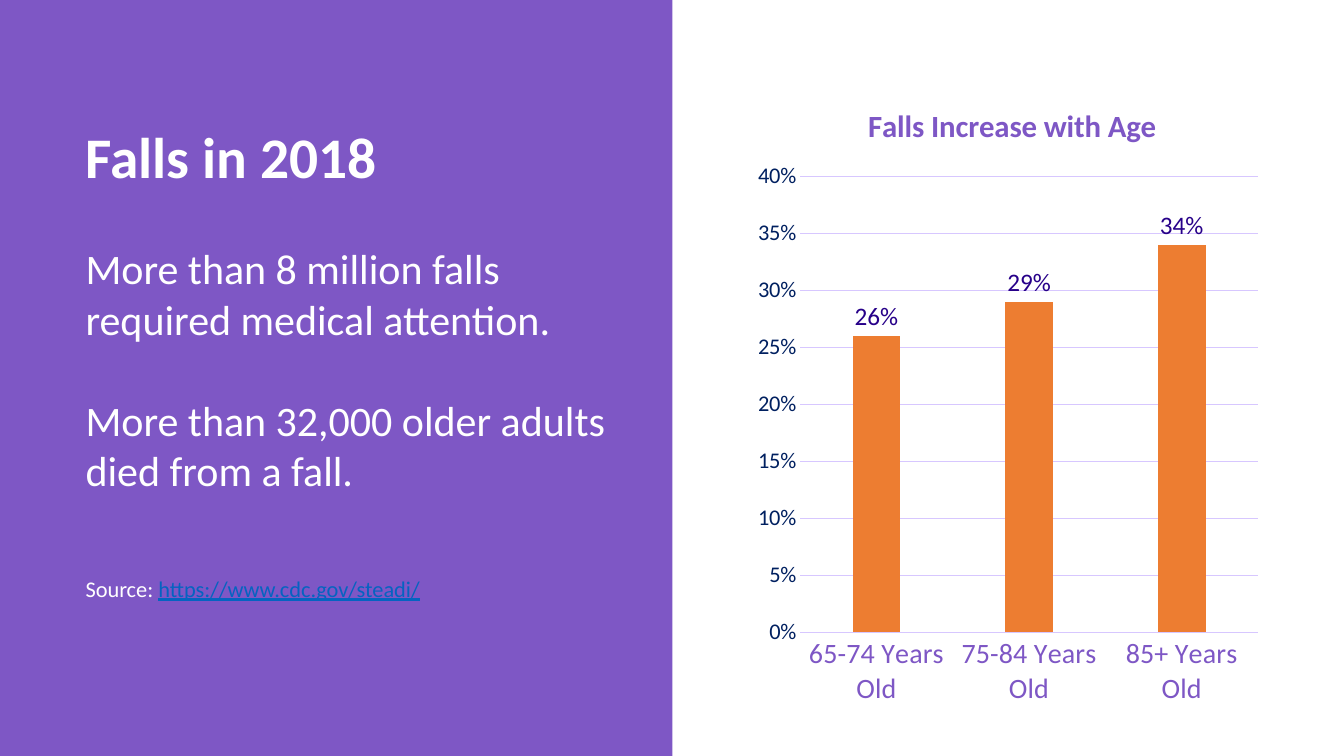
from lxml import etree
from pptx import Presentation
from pptx.chart.data import CategoryChartData
from pptx.dml.color import RGBColor
from pptx.enum.chart import XL_CHART_TYPE, XL_LABEL_POSITION as LabelPos, XL_TICK_MARK as Tick
from pptx.enum.shapes import MSO_SHAPE
from pptx.enum.text import MSO_ANCHOR
from pptx.oxml.ns import qn
from pptx.util import Inches, Pt

PURPLE = RGBColor(0x7E, 0x57, 0xC5)
WHITE = RGBColor(0xFF, 0xFF, 0xFF)
LINK = RGBColor(0x05, 0x63, 0xC1)
ORANGE = RGBColor(0xED, 0x7D, 0x31)
INDIGO = RGBColor(0x27, 0x00, 0x89)
NAVY = RGBColor(0x00, 0x20, 0x60)
LILAC = RGBColor(0xD7, 0xC7, 0xFF)

TITLE = "Falls in 2018"
# (space before in points, [(text, size, colour, underlined)])
FACTS = [
    (0, [("More than 8 million falls required medical attention.", 30, WHITE, False)]),
    (36, [("More than 32,000 older adults died from a fall.", 30, WHITE, False)]),
    (57, [("Source: ", 16, WHITE, False),
          ("https://www.cdc.gov/steadi/", 16, LINK, True)]),
]
CHART_TITLE = "Falls Increase with Age"
FALL_RATES = {"65-74 Years Old": 0.26, "75-84 Years Old": 0.29, "85+ Years Old": 0.34}
TITLE_PLACE = {"x": 0.22, "y": 0.04}
PLOT_PLACE = {"x": 0.1, "y": 0.16, "w": 0.88, "h": 0.71}


def set_font(font, size, color, **more):
    font.color.rgb = color
    for name, value in {"name": "Calibri", "size": Pt(size), **more}.items():
        setattr(font, name, value)


def add_text(s, box, paragraphs, **frame):
    tf = s.shapes.add_textbox(*map(Inches, box)).text_frame
    for name, value in {"word_wrap": True, **frame}.items():
        setattr(tf, name, value)
    for i, (before, runs) in enumerate(paragraphs):
        p = tf.add_paragraph() if i else tf.paragraphs[0]
        p.space_before = Pt(before)
        for text, size, color, underline, *bold in runs:
            r = p.add_run()
            r.text = text
            set_font(r.font, size, color, underline=underline, bold=bool(bold))
    return tf


def place(element, fractions, inner=False):
    """Fix a chart part at fractions of the chart's width and height."""
    layout = element.find(qn("c:layout"))
    if layout is None:
        layout = etree.Element(qn("c:layout"))
        text = element.find(qn("c:tx"))
        element.insert(0 if text is None else 1, layout)
    manual = etree.SubElement(layout, qn("c:manualLayout"))
    values = {"layoutTarget": "inner"} if inner else {}
    values.update(xMode="edge", yMode="edge", **fractions)
    for tag, value in values.items():
        etree.SubElement(manual, qn(f"c:{tag}")).set("val", str(value))


def style_line(line):
    line.color.rgb = LILAC
    line.width = Pt(0.75)


def add_falls_chart(s, box):
    data = CategoryChartData(number_format="0%")
    data.categories = list(FALL_RATES)
    data.add_series("Series 1", FALL_RATES.values())
    chart = s.shapes.add_chart(XL_CHART_TYPE.COLUMN_CLUSTERED,
                               *map(Inches, box), data).chart
    set_font(chart.font, 10, INDIGO)
    chart.has_legend = False

    title = chart.chart_title
    title.text_frame.text = CHART_TITLE
    set_font(title.text_frame.paragraphs[0].runs[0].font, 22, PURPLE, bold=True)
    title.include_in_layout = False
    root = chart.element.find(qn("c:chart"))
    place(root.find(qn("c:title")), TITLE_PLACE)
    place(root.find(qn("c:plotArea")), PLOT_PLACE, inner=True)

    cat, val = chart.category_axis, chart.value_axis
    for axis, size, color in ((cat, 20, PURPLE), (val, 16, NAVY)):
        axis.major_tick_mark = axis.minor_tick_mark = Tick.NONE
        set_font(axis.tick_labels.font, size, color)
    style_line(cat.format.line)
    val.format.line.fill.background()
    style_line(val.major_gridlines.format.line)
    val.minimum_scale, val.maximum_scale, val.major_unit = 0, 0.4, 0.05
    val.tick_labels.number_format = "0%"
    val.tick_labels.number_format_is_linked = False

    plot = chart.plots[0]
    plot.gap_width, plot.overlap, plot.vary_by_categories = 219, -27, False
    bars = plot.series[0]
    bars.format.fill.solid()
    bars.format.fill.fore_color.rgb = ORANGE
    labels = bars.data_labels
    for name, value in {"show_value": True, "position": LabelPos.OUTSIDE_END,
                        "number_format": "0%",
                        "number_format_is_linked": False}.items():
        setattr(labels, name, value)
    set_font(labels.font, 18, INDIGO)


def main():
    prs = Presentation()
    prs.slide_width, prs.slide_height = Inches(13.33), Inches(7.5)
    s = prs.slides.add_slide(prs.slide_layouts[6])

    panel = s.shapes.add_shape(MSO_SHAPE.RECTANGLE, 0, 0, Inches(6.67), Inches(7.5))
    panel.shadow.inherit = False
    panel.fill.solid()
    panel.fill.fore_color.rgb = PURPLE
    panel.line.fill.background()

    heading = [(0, [(TITLE, 41, WHITE, False, True)])]
    tf = add_text(s, (0.75, 0.84, 3.86, 1.5), heading, vertical_anchor=MSO_ANCHOR.MIDDLE)
    tf.paragraphs[0].line_spacing = 0.9
    add_text(s, (0.75, 2.36, 5.55, 4.11), FACTS)
    add_falls_chart(s, (7.42, 0.73, 5.16, 6.37))
    prs.save("out.pptx")


if __name__ == "__main__":
    main()
